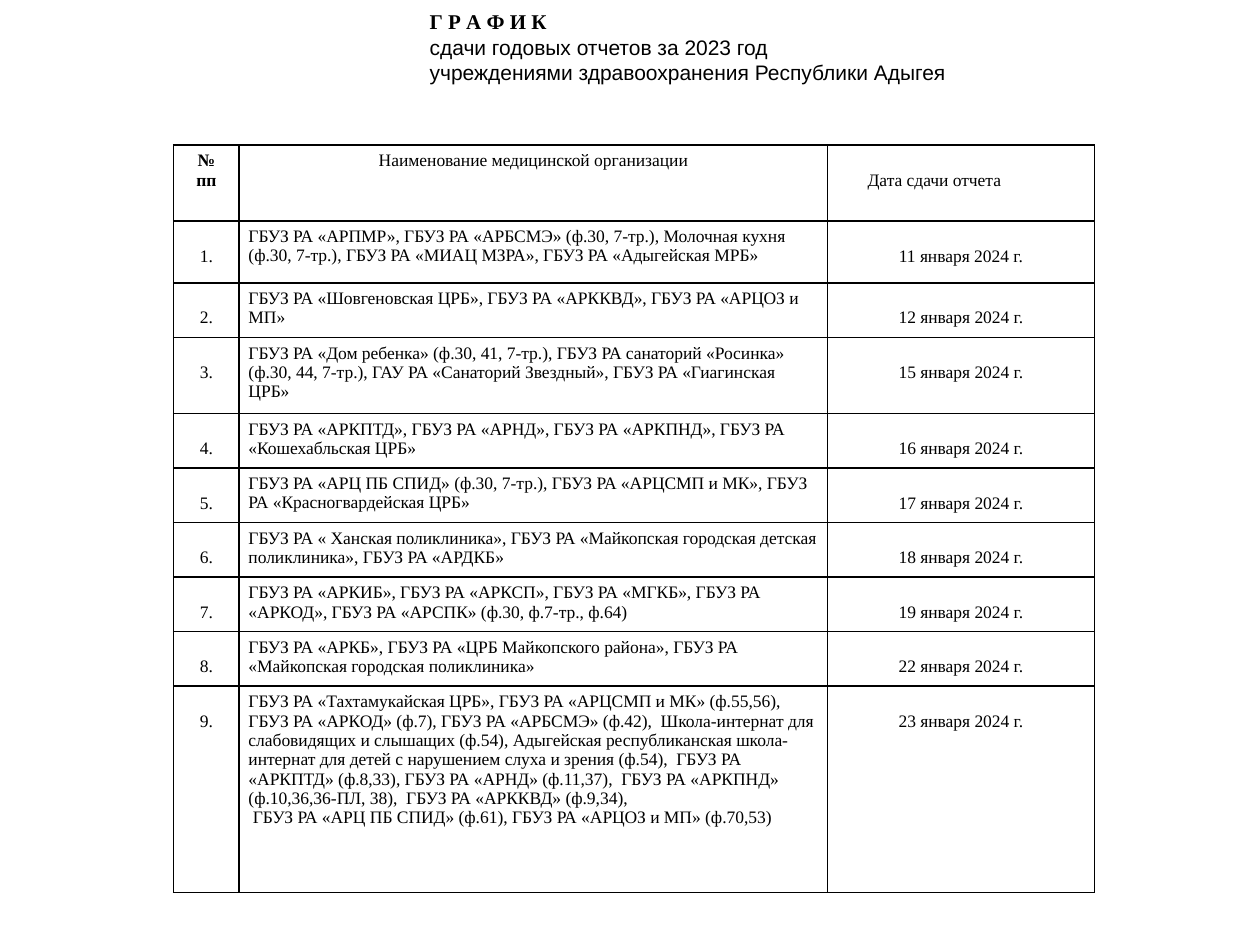
"""Build the slide with the schedule of annual report submissions."""
from dataclasses import dataclass

from lxml.etree import SubElement
from pptx import Presentation
from pptx.dml.color import RGBColor
from pptx.enum.text import MSO_ANCHOR, PP_ALIGN
from pptx.oxml.ns import qn
from pptx.util import Pt

BLACK = "000000"
WHITE = "FFFFFF"
SERIF = "Times New Roman"
SIDE_MARGIN = 5.4
TOP_MARGIN = 3.6
LOWERED_MARGIN = 14.7
BORDER_WIDTH = 0.96
COLUMN_WIDTHS = (37.4, 336.2, 152.6)
HEADER_HEIGHT = 43.4


@dataclass
class Submission:
    organisations: str
    day: int
    height: float = 31.2


SUBMISSIONS = [
    Submission("ГБУЗ РА «АРПМР», ГБУЗ РА «АРБСМЭ» (ф.30, 7-тр.), Молочная кухня (ф.30, 7-тр.), "
               "ГБУЗ РА «МИАЦ МЗРА», ГБУЗ РА «Адыгейская МРБ»", 11, 35.4),
    Submission("ГБУЗ РА «Шовгеновская ЦРБ», ГБУЗ РА «АРККВД», ГБУЗ РА «АРЦОЗ и МП»", 12),
    Submission("ГБУЗ РА «Дом ребенка» (ф.30, 41, 7-тр.), ГБУЗ РА санаторий «Росинка» "
               "(ф.30, 44, 7-тр.), ГАУ РА «Санаторий Звездный», ГБУЗ РА «Гиагинская ЦРБ»", 15, 43.4),
    Submission("ГБУЗ РА «АРКПТД», ГБУЗ РА «АРНД», ГБУЗ РА «АРКПНД», "
               "ГБУЗ РА «Кошехабльская ЦРБ»", 16),
    Submission("ГБУЗ РА «АРЦ ПБ СПИД» (ф.30, 7-тр.), ГБУЗ РА «АРЦСМП и МК», "
               "ГБУЗ РА «Красногвардейская ЦРБ»", 17),
    Submission("ГБУЗ РА « Ханская поликлиника», ГБУЗ РА «Майкопская городская детская "
               "поликлиника», ГБУЗ РА «АРДКБ»", 18),
    Submission("ГБУЗ РА «АРКИБ», ГБУЗ РА «АРКСП», ГБУЗ РА «МГКБ», ГБУЗ РА «АРКОД», "
               "ГБУЗ РА «АРСПК» (ф.30, ф.7-тр., ф.64)", 19),
    Submission("ГБУЗ РА «АРКБ», ГБУЗ РА «ЦРБ Майкопского района», "
               "ГБУЗ РА «Майкопская городская поликлиника»", 22),
    Submission("ГБУЗ РА «Тахтамукайская ЦРБ», ГБУЗ РА «АРЦСМП и МК» (ф.55,56),\n"
               "ГБУЗ РА «АРКОД» (ф.7), ГБУЗ РА «АРБСМЭ» (ф.42),  Школа-интернат для "
               "слабовидящих и слышащих (ф.54), Адыгейская республиканская школа-интернат "
               "для детей с нарушением слуха и зрения (ф.54),  ГБУЗ РА «АРКПТД» (ф.8,33), "
               "ГБУЗ РА «АРНД» (ф.11,37),  ГБУЗ РА «АРКПНД» (ф.10,36,36-ПЛ, 38),  "
               "ГБУЗ РА «АРККВД» (ф.9,34),\n"
               " ГБУЗ РА «АРЦ ПБ СПИД» (ф.61), ГБУЗ РА «АРЦОЗ и МП» (ф.70,53)", 23, 118),
]


def color(value: str) -> RGBColor:
    return RGBColor.from_string(value)


def write(paragraph, text: str, *, font: str = SERIF, size: float = 10, bold: bool = False,
          align: PP_ALIGN = PP_ALIGN.LEFT, spacing: float | None = None) -> None:
    paragraph.alignment = align
    paragraph.space_before = Pt(0)
    if spacing:
        paragraph.line_spacing = Pt(spacing)
    run = paragraph.add_run()
    run.text = text
    run.font.name = font
    run.font.size = Pt(size)
    run.font.bold = bold
    run.font.color.rgb = color(BLACK)


def add_borders(cell) -> None:
    properties = cell._tc.get_or_add_tcPr()
    for side in ("a:lnL", "a:lnR", "a:lnT", "a:lnB"):
        line = SubElement(properties, qn(side), w=str(Pt(BORDER_WIDTH)))
        fill = SubElement(line, qn("a:solidFill"))
        SubElement(fill, qn("a:srgbClr"), val=BLACK)


def fill_cell(cell, text: str, *, top: float = TOP_MARGIN, left: float = SIDE_MARGIN,
              bold: bool = False, align: PP_ALIGN = PP_ALIGN.CENTER) -> None:
    add_borders(cell)
    cell.fill.solid()
    cell.fill.fore_color.rgb = color(WHITE)
    cell.margin_left, cell.margin_right = Pt(left), Pt(SIDE_MARGIN)
    cell.margin_top, cell.margin_bottom = Pt(top), Pt(TOP_MARGIN)
    cell.vertical_anchor = MSO_ANCHOR.TOP
    frame = cell.text_frame
    for index, line in enumerate(text.split("\n")):
        paragraph = frame.add_paragraph() if index else frame.paragraphs[0]
        write(paragraph, line, bold=bold, align=align)


def add_title(slide) -> None:
    title = slide.shapes.title
    title.left, title.top, title.width, title.height = Pt(238.3), Pt(-7.2), Pt(316), Pt(80)
    frame = title.text_frame
    frame.word_wrap = False
    frame.vertical_anchor = MSO_ANCHOR.TOP
    frame.margin_left = frame.margin_right = Pt(7.2)
    frame.margin_top, frame.margin_bottom = Pt(12), Pt(3.6)
    write(frame.paragraphs[0], "Г Р А Ф И К", size=12, bold=True, spacing=14.6)
    for line in ("сдачи годовых отчетов за 2023 год",
                 "учреждениями здравоохранения Республики Адыгея"):
        write(frame.add_paragraph(), line, font="Arial", size=12, spacing=14.6)


def add_schedule(slide) -> None:
    heights = [HEADER_HEIGHT] + [submission.height for submission in SUBMISSIONS]
    table = slide.shapes.add_table(
        len(heights), len(COLUMN_WIDTHS), Pt(99.2), Pt(82.8),
        Pt(sum(COLUMN_WIDTHS)), Pt(sum(heights))).table
    table.first_row = table.horz_banding = False
    for column, width in zip(table.columns, COLUMN_WIDTHS):
        column.width = Pt(width)
    for row, height in zip(table.rows, heights):
        row.height = Pt(height)

    fill_cell(table.cell(0, 0), "№\nпп", bold=True)
    fill_cell(table.cell(0, 1), "Наименование медицинской организации")
    fill_cell(table.cell(0, 2), "Дата сдачи отчета", top=LOWERED_MARGIN, left=23,
              align=PP_ALIGN.LEFT)
    for number, submission in enumerate(SUBMISSIONS, start=1):
        fill_cell(table.cell(number, 0), f"{number}.", top=LOWERED_MARGIN)
        fill_cell(table.cell(number, 1), submission.organisations, align=PP_ALIGN.LEFT)
        fill_cell(table.cell(number, 2), f"{submission.day} января 2024 г.", top=LOWERED_MARGIN)


def main() -> None:
    presentation = Presentation()
    presentation.slide_width, presentation.slide_height = Pt(720), Pt(540)
    slide = presentation.slides.add_slide(presentation.slide_layouts[5])
    add_title(slide)
    add_schedule(slide)
    presentation.save("out.pptx")


if __name__ == "__main__":
    main()
